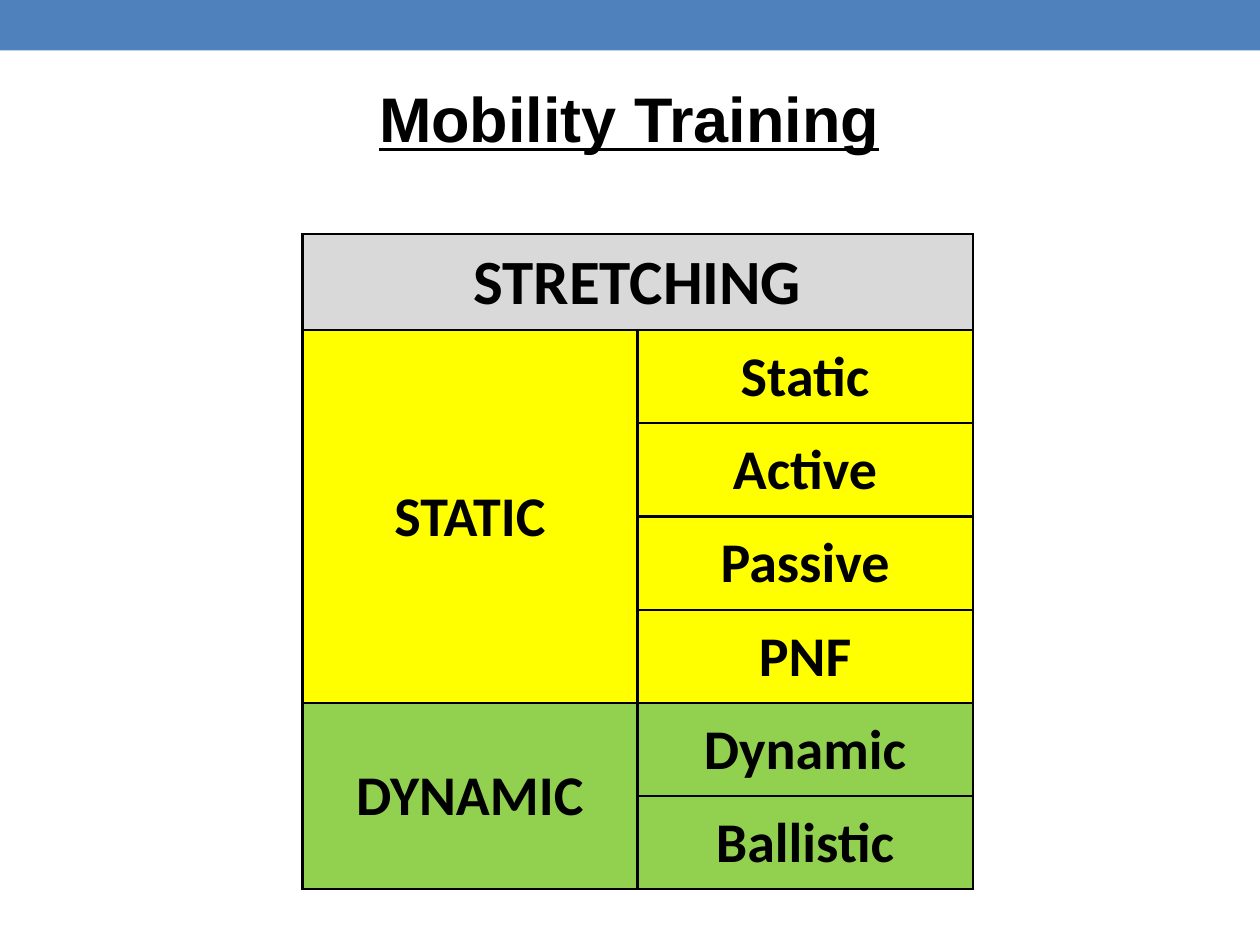
from lxml.etree import SubElement
from pptx import Presentation
from pptx.dml.color import RGBColor
from pptx.enum.shapes import MSO_SHAPE as SHAPE
from pptx.enum.text import MSO_ANCHOR as ANCHOR, PP_ALIGN as ALIGN
from pptx.oxml.ns import qn
from pptx.util import Inches, Pt

TITLE = "Mobility Training"
HEADING = "STRETCHING"
GROUPS = [
    ("STATIC", "FFFF00", ["Static", "Active", "Passive", "PNF"]),
    ("DYNAMIC", "92D050", ["Dynamic", "Ballistic"]),
]
BLACK, GREY, BLUE = "000000", "D9D9D9", "4F81BD"
COL_W, HEAD_H, ROW_H = 2.66, 0.76, 0.74


def color(value):
    return RGBColor.from_string(value)


def write(tf, text, size, font, underline=None):
    p = tf.paragraphs[0]
    p.alignment = ALIGN.CENTER
    r = p.add_run()
    r.text = text
    r.font.name, r.font.size = font, Pt(size)
    r.font.bold, r.font.underline = True, underline
    r.font.color.rgb = color(BLACK)


def add_borders(cell):
    pr = cell._tc.get_or_add_tcPr()
    for i, side in enumerate(("lnL", "lnR", "lnT", "lnB")):
        ln = pr.makeelement(qn(f"a:{side}"), {"w": str(Pt(1.5))})
        fill = SubElement(ln, qn("a:solidFill"))
        SubElement(fill, qn("a:srgbClr"), val=BLACK)
        pr.insert(i, ln)


def style_cell(cell, fill):
    cell.fill.solid()
    cell.fill.fore_color.rgb = color(fill)
    cell.vertical_anchor = ANCHOR.MIDDLE
    cell.margin_left = cell.margin_right = cell.margin_top = Inches(0.01)
    cell.margin_bottom = 0
    add_borders(cell)


prs = Presentation()
prs.slide_width, prs.slide_height = Inches(10), Inches(7.5)
s = prs.slides.add_slide(prs.slide_layouts[6])

band = s.shapes.add_shape(SHAPE.RECTANGLE, 0, 0, prs.slide_width, Inches(0.4))
band.shadow.inherit = False
band.fill.solid()
band.fill.fore_color.rgb = color(BLUE)
band.line.fill.background()

title = s.shapes.add_textbox(Inches(0.43), Inches(0.52), Inches(9.13), Inches(0.87))
tf = title.text_frame
tf.word_wrap = True
tf.margin_top = Inches(0.11)
write(tf, TITLE, 36, "Arial", True)

n_rows = 1 + sum(len(kinds) for _, _, kinds in GROUPS)
table = s.shapes.add_table(
    n_rows, 2, Inches(2.4), Inches(1.86),
    Inches(2 * COL_W), Inches(HEAD_H + (n_rows - 1) * ROW_H),
).table
for col in table.columns:
    col.width = Inches(COL_W)
for i, row in enumerate(table.rows):
    row.height = Inches(ROW_H if i else HEAD_H)

fills = [GREY] + [fill for _, fill, kinds in GROUPS for _ in kinds]
for row, fill in zip(table.rows, fills):
    for cell in row.cells:
        style_cell(cell, fill)

table.cell(0, 0).merge(table.cell(0, 1))
write(table.cell(0, 0).text_frame, HEADING, 36, "Calibri")
top = 1
for name, _, kinds in GROUPS:
    table.cell(top, 0).merge(table.cell(top + len(kinds) - 1, 0))
    write(table.cell(top, 0).text_frame, name, 32, "Calibri")
    for i, kind in enumerate(kinds, top):
        write(table.cell(i, 1).text_frame, kind, 32, "Calibri")
    top += len(kinds)

prs.save("out.pptx")
